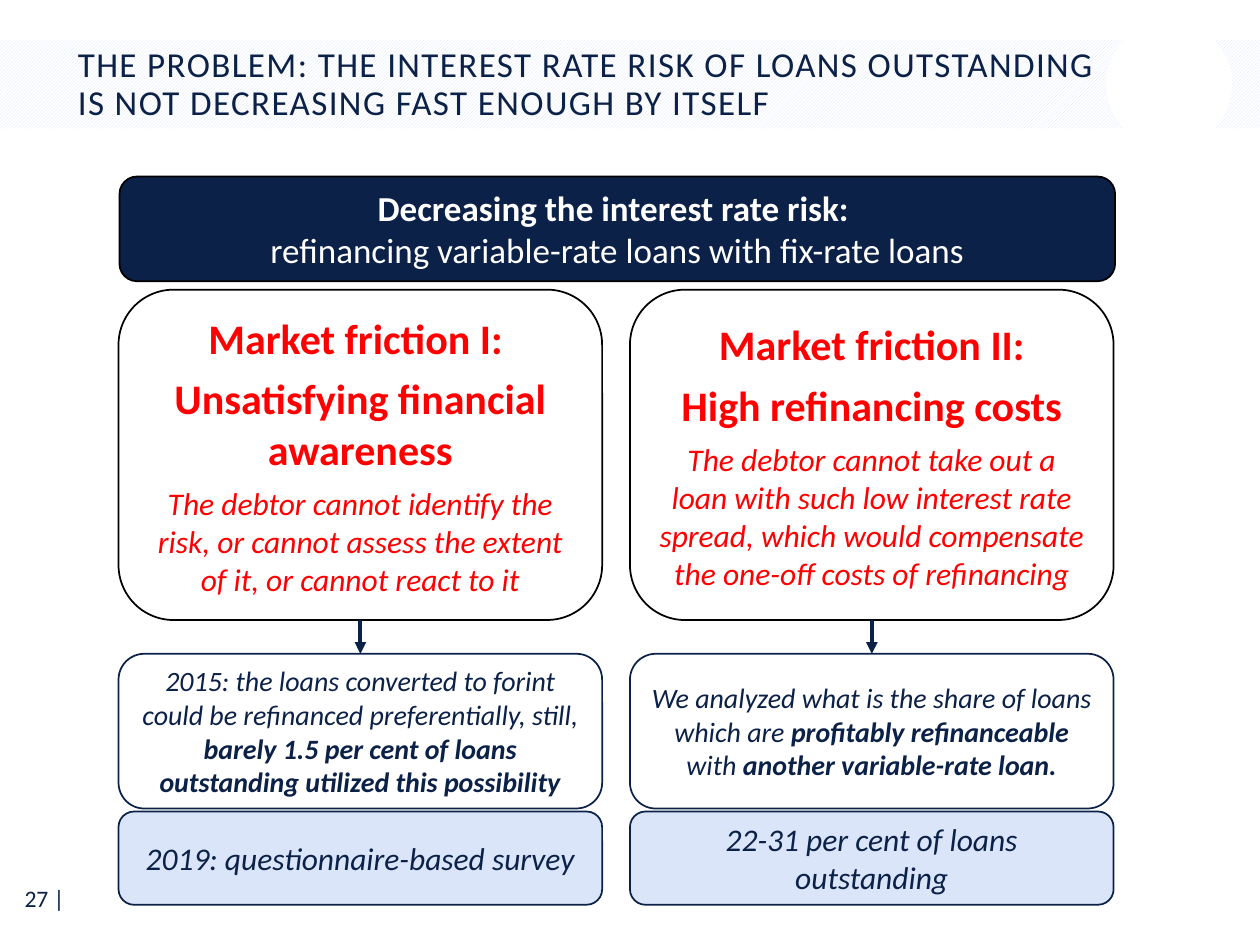
from dataclasses import dataclass

from lxml import etree
from pptx import Presentation
from pptx.dml.color import RGBColor
from pptx.enum.dml import MSO_PATTERN
from pptx.enum.shapes import MSO_CONNECTOR, MSO_SHAPE
from pptx.enum.text import MSO_ANCHOR, PP_ALIGN
from pptx.oxml.ns import qn
from pptx.util import Cm, Pt

ROUNDED, RECT, OVAL = MSO_SHAPE.ROUNDED_RECTANGLE, MSO_SHAPE.RECTANGLE, MSO_SHAPE.OVAL
STRAIGHT = MSO_CONNECTOR.STRAIGHT
DIAGONAL = MSO_PATTERN.LIGHT_UPWARD_DIAGONAL
MIDDLE = MSO_ANCHOR.MIDDLE
LEFT, CENTER, RIGHT = PP_ALIGN.LEFT, PP_ALIGN.CENTER, PP_ALIGN.RIGHT
BOTTOM_SIDE, TOP_SIDE = 2, 0


@dataclass(frozen=True)
class Theme:
    """Colours, font and type sizes of the slide."""
    navy: RGBColor = RGBColor(0x0C, 0x21, 0x48)
    pale: RGBColor = RGBColor(0xDA, 0xE5, 0xF9)
    white: RGBColor = RGBColor(0xFF, 0xFF, 0xFF)
    black: RGBColor = RGBColor(0, 0, 0)
    red: RGBColor = RGBColor(0xFF, 0, 0)
    font: str = "Calibri"
    title: float = 20
    heading: float = 24
    body: float = 18
    detail: float = 16
    number: float = 13.5


T = Theme()

COLUMNS = [
    (2.39,
     ["Market friction I: ", "Unsatisfying financial awareness"],
     "The debtor cannot identify the risk, or cannot assess the extent of it, "
     "or cannot react to it",
     [("2015: the loans converted to forint could be refinanced preferentially, still, ", False),
      ("barely 1.5 per cent of loans outstanding utilized this possibility", True)],
     "2019: questionnaire-based survey"),
    (12.7,
     ["Market friction II:", "High refinancing costs"],
     "The debtor cannot take out a loan with such low interest rate spread, "
     "which would compensate the one-off costs of refinancing",
     [("We analyzed what is the share of loans which are ", False),
      ("profitably refinanceable ", True), ("with ", False),
      ("another variable-rate loan.", True)],
     "22-31 per cent of loans outstanding"),
]


def add_paragraph(tf, text, size, color, align=CENTER, bold=False, italic=False, after=0):
    """Add a paragraph from a string or from (text, bold) pairs."""
    p = tf.paragraphs[0] if not tf.paragraphs[0].runs else tf.add_paragraph()
    p.alignment = align
    p.space_after = Pt(after)
    p.font.name, p.font.size, p.font.color.rgb = T.font, Pt(size), color
    p.font.italic = italic
    if isinstance(text, str):
        p.font.bold = bold
        p.add_run().text = text
    else:
        for part, strong in text:
            r = p.add_run()
            r.text = part
            r.font.bold = strong
    return p


def add_shape(s, kind, box, fill=None, line=None):
    """Add a flat shape in a box of centimetres."""
    sp = s.shapes.add_shape(kind, *map(Cm, box))
    sp.shadow.inherit = False
    if fill is None:
        sp.fill.background()
    else:
        sp.fill.solid()
        sp.fill.fore_color.rgb = fill
    if line is None:
        sp.line.fill.background()
    else:
        sp.line.color.rgb = line
        sp.line.width = Pt(1)
    sp.text_frame.word_wrap = True
    sp.text_frame.vertical_anchor = MIDDLE
    return sp


def add_text_box(s, box):
    """Add a wrapping text box and return its text frame."""
    tf = s.shapes.add_textbox(*map(Cm, box)).text_frame
    tf.word_wrap = True
    tf.vertical_anchor = MIDDLE
    return tf


def add_arrow(s, upper, lower):
    """Join two stacked boxes with a downward arrow."""
    line = s.shapes.add_connector(STRAIGHT, 0, 0, 0, 0)
    line.begin_connect(upper, BOTTOM_SIDE)
    line.end_connect(lower, TOP_SIDE)
    line.line.color.rgb = T.navy
    line.line.width = Pt(2.25)
    etree.SubElement(line.line._get_or_add_ln(), qn("a:tailEnd"), type="triangle")
    etree.SubElement(line._element.spPr, qn("a:effectLst"))


def title_band(s, left, top, width, height):
    """Draw the hatched band with its round gap and the title."""
    band = add_shape(s, RECT, (left, top, width, height))
    band.fill.patterned()
    band.fill.pattern = DIAGONAL
    band.fill.fore_color.rgb, band.fill.back_color.rgb = T.pale, T.white
    add_shape(s, OVAL, (left + 22.3, top - 0.38, 2.54, 2.54), T.white)
    tf = add_text_box(s, (left + 1.32, top + 0.05, 21.13, 1.7))
    p = add_paragraph(
        tf, "THE PROBLEM: THE INTEREST RATE RISK OF LOANS OUTSTANDING "
        "IS NOT DECREASING FAST ENOUGH BY ITSELF", T.title, T.navy, LEFT)
    p.line_spacing = 0.9
    p.runs[0]._r.get_or_add_rPr().set("spc", "80")


def goal_banner(s, box):
    """Draw the dark banner that states the goal."""
    tf = add_shape(s, ROUNDED, box, T.navy, T.black).text_frame
    add_paragraph(tf, "Decreasing the interest rate risk: ", T.title, T.white, bold=True)
    add_paragraph(tf, "refinancing variable-rate loans with fix-rate loans", T.title, T.white)


def friction_column(s, left, top, width, headings, problem, evidence, outcome):
    """Stack a market friction, its evidence and its outcome."""
    friction = add_shape(s, ROUNDED, (left, top, width, 6.66), line=T.black)
    for heading in headings:
        add_paragraph(friction.text_frame, heading, T.heading, T.red, bold=True, after=6)
    add_paragraph(friction.text_frame, problem, T.body, T.red, italic=True)
    proof = add_shape(s, ROUNDED, (left, top + 7.34, width, 3.12), line=T.navy)
    add_paragraph(proof.text_frame, evidence, T.detail, T.navy, italic=True)
    result = add_shape(s, ROUNDED, (left, top + 10.52, width, 1.88), T.pale, T.navy)
    add_paragraph(result.text_frame, outcome, T.body, T.navy, italic=True)
    add_arrow(s, friction, proof)


def page_number(s, box):
    """Write the page number."""
    add_paragraph(add_text_box(s, box), "27 |", T.number, T.navy, RIGHT)


def main():
    """Build the slide and save it."""
    prs = Presentation()
    prs.slide_width, prs.slide_height = Cm(25.4), Cm(19.05)
    s = prs.slides.add_slide(prs.slide_layouts[6])
    title_band(s, 0, 0.81, 25.4, 1.78)
    goal_banner(s, (2.41, 3.56, 20.07, 2.11))
    for left, *content in COLUMNS:
        friction_column(s, left, 5.84, 9.75, *content)
    page_number(s, (0.03, 17.63, 1.52, 0.94))
    prs.save("out.pptx")


if __name__ == "__main__":
    main()
